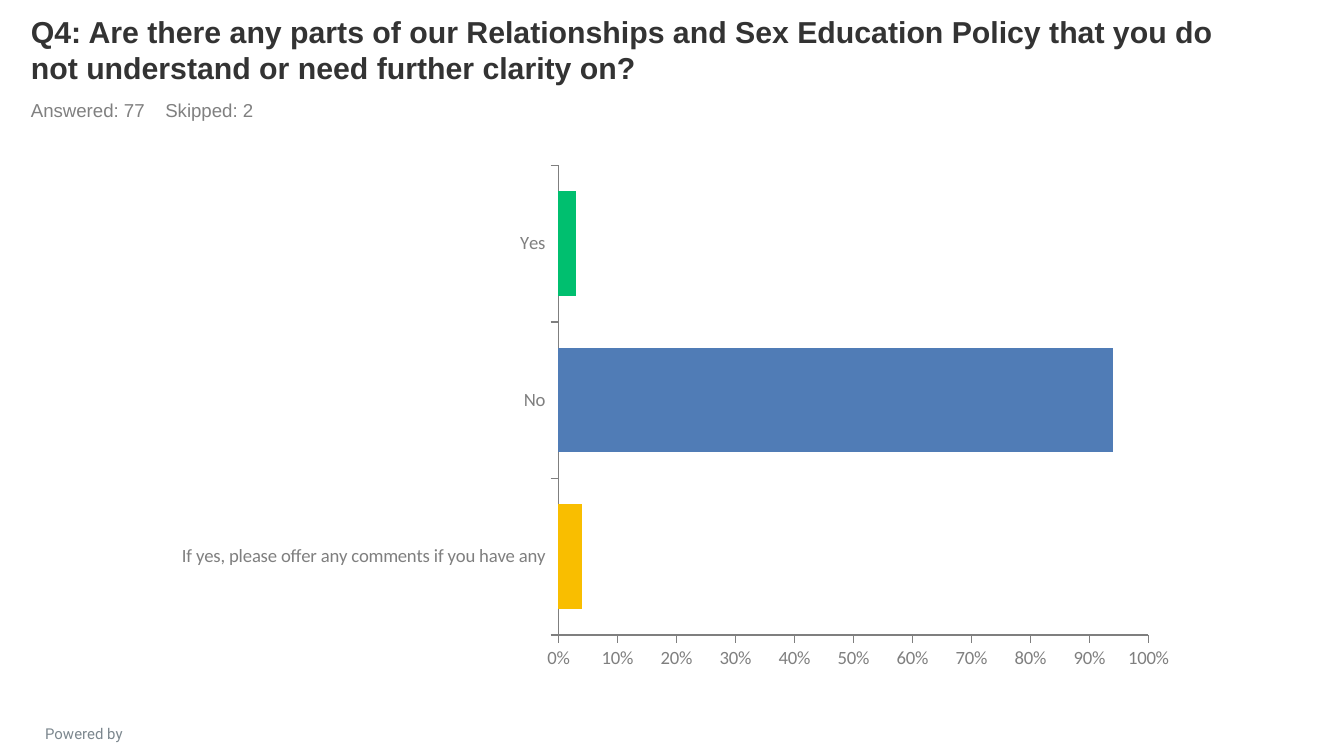
from lxml import etree
from pptx import Presentation
from pptx import util as u
from pptx.chart.data import CategoryChartData
from pptx.dml.color import RGBColor
from pptx.enum import chart as ch
from pptx.enum import text
from pptx.oxml.ns import qn

WIDTH = u.Inches(10)
HEIGHT = WIDTH * 9 // 16

GREY = "7F7F7F"
THEME = {
    "title": dict(name="Arial", size=16.2, color="333333", bold=True),
    "counts": dict(name="Arial", size=10, color="808080", bold=False),
    "footer": dict(name="Roboto", size=8, color="7C878E", bold=False),
    "chart": dict(name="Calibri", size=18, color="333333", bold=False),
    "axis": dict(name="Calibri", size=10, color=GREY, bold=False),
}
ANSWERS = [  # label, share of answers, bar colour
    ("Yes", 0.03, "00BF6F"),
    ("No", 0.94, "507CB6"),
    ("If yes, please offer any comments if you have any", 0.04, "F9BE00"),
]


def box(left, top, width, height):
    """Turn shares of the slide's size into lengths."""
    return [int(share * side) for share, side in
            zip((left, top, width, height), (WIDTH, HEIGHT) * 2)]


def set_all(obj, values):
    for name, value in values.items():
        setattr(obj, name, value)


def style_font(font, role):
    style = dict(THEME[role])
    font.color.rgb = RGBColor.from_string(style.pop("color"))
    style["size"] = u.Pt(style["size"])
    set_all(font, style)


def place(sp, area):
    set_all(sp, dict(zip(("left", "top", "width", "height"), area)))


def write(sp, words, role, anchor, align, tab=None):
    tf = sp.text_frame
    set_all(tf, dict(word_wrap=True, vertical_anchor=anchor,
                     auto_size=text.MSO_AUTO_SIZE.NONE))
    p = tf.paragraphs[0]
    p.text = words
    pPr = p._p.get_or_add_pPr()
    pPr.set("marL", "0")
    pPr.set("indent", "0")
    etree.SubElement(pPr, qn("a:buNone"))
    if tab:
        stops = etree.SubElement(pPr, qn("a:tabLst"))
        etree.SubElement(stops, qn("a:tab"), pos=str(tab), algn="l")
    set_all(p, dict(alignment=align, space_before=u.Pt(0)))
    for r in p.runs:
        style_font(r.font, role)


def add_heading(s, area):
    """Question in the title placeholder, with the answer counts below it."""
    left, top, width, height = area
    title_height = int(height * 0.7)
    title, counts = s.shapes.title, s.placeholders[1]
    place(title, (left, top, width, title_height))
    place(counts, (left, top + title_height, width, height - title_height))
    write(title, "Q4: Are there any parts of our Relationships and Sex Education "
                 "Policy that you do not understand or need further clarity on?",
          "title", text.MSO_ANCHOR.BOTTOM, text.PP_ALIGN.LEFT)
    write(counts, "Answered: 77\tSkipped: 2", "counts",
          text.MSO_ANCHOR.TOP, text.PP_ALIGN.LEFT, tab=u.Inches(0.94))


def style_axis(axis):
    set_all(axis, dict(has_major_gridlines=False, has_title=False,
                       major_tick_mark=ch.XL_TICK_MARK.OUTSIDE,
                       minor_tick_mark=ch.XL_TICK_MARK.NONE))
    style_font(axis.tick_labels.font, "axis")
    axis.format.line.color.rgb = RGBColor.from_string(GREY)
    axis.format.line.width = u.Pt(0.75)


def add_answer_chart(s, area):
    labels, shares, colours = zip(*ANSWERS)
    data = CategoryChartData()
    data.categories = labels
    data.add_series("Series 1", shares)
    chart = s.shapes.add_chart(ch.XL_CHART_TYPE.BAR_CLUSTERED, *area, data).chart
    set_all(chart, dict(has_legend=False, has_title=False))
    style_font(chart.font, "chart")

    plot = chart.plots[0]
    set_all(plot, dict(gap_width=50, overlap=100, vary_by_categories=False))
    series = plot.series[0]
    for fmt in [series.format] + [series.points[i].format for i in range(len(colours))]:
        fmt.fill.solid()
    series.format.fill.fore_color.rgb = RGBColor.from_string(colours[0])
    for i, colour in enumerate(colours):
        series.points[i].format.fill.fore_color.rgb = RGBColor.from_string(colour)

    categories, values = chart.category_axis, chart.value_axis
    for axis in (categories, values):
        style_axis(axis)
    set_all(categories, dict(reverse_order=True,
                             tick_label_position=ch.XL_TICK_LABEL_POSITION.LOW))
    set_all(values, dict(minimum_scale=0, maximum_scale=1, major_unit=0.1))
    set_all(values.tick_labels, dict(number_format="0%",
                                     number_format_is_linked=False))
    # The category order is reversed, so the last category is at the bottom.
    values._element.find(qn("c:crosses")).set("val", "max")


def add_footer(s, area):
    write(s.shapes.add_textbox(*area), "Powered by", "footer",
          text.MSO_ANCHOR.TOP, text.PP_ALIGN.CENTER)


def main():
    prs = Presentation()
    set_all(prs, dict(slide_width=WIDTH, slide_height=HEIGHT))
    s = prs.slides.add_slide(prs.slide_layouts[1])
    add_footer(s, box(0.005, 0.95, 0.115, 0.032))
    add_heading(s, box(0.013, 0.015, 0.9, 0.153))
    add_answer_chart(s, box(0.12, 0.205, 0.765, 0.694))
    prs.save("out.pptx")


if __name__ == "__main__":
    main()
